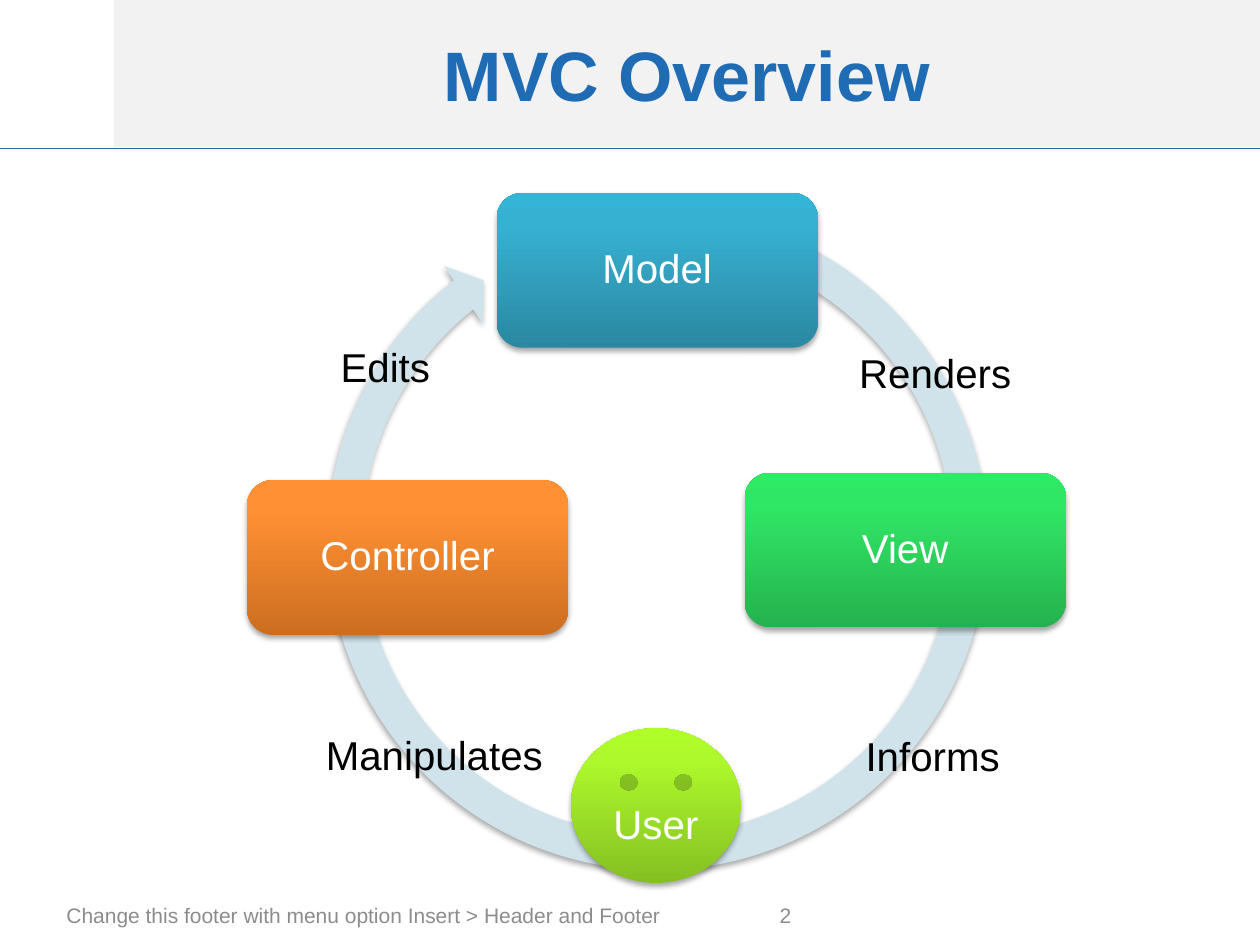
from copy import deepcopy

from lxml import etree
from pptx import Presentation
from pptx.dml.color import RGBColor
from pptx.enum.shapes import MSO_CONNECTOR, MSO_SHAPE
from pptx.enum.text import MSO_ANCHOR, MSO_AUTO_SIZE, PP_ALIGN
from pptx.oxml.ns import qn
from pptx.util import Cm, Pt

LEFT, CENTER, RIGHT = PP_ALIGN.LEFT, PP_ALIGN.CENTER, PP_ALIGN.RIGHT
MIDDLE = MSO_ANCHOR.MIDDLE
FIT_SHAPE, NO_FIT = MSO_AUTO_SIZE.SHAPE_TO_FIT_TEXT, MSO_AUTO_SIZE.NONE
RECTANGLE, ROUNDED = MSO_SHAPE.RECTANGLE, MSO_SHAPE.ROUNDED_RECTANGLE
SMILEY, CIRCULAR_ARROW = MSO_SHAPE.SMILEY_FACE, MSO_SHAPE.CIRCULAR_ARROW
STRAIGHT = MSO_CONNECTOR.STRAIGHT

BLUE = RGBColor(0x1F, 0x6C, 0xB4)
BAND_GRAY = RGBColor(0xF2, 0xF2, 0xF2)
FOOTER_GRAY = RGBColor(0x8C, 0x8C, 0x8C)
PALE_BLUE = RGBColor(0xD0, 0xE3, 0xEA)
WHITE = RGBColor(0xFF, 0xFF, 0xFF)
BLACK = RGBColor(0x00, 0x00, 0x00)

# Gradient colours from the bottom of a node to its top
TEAL = (RGBColor(0x2A, 0x88, 0xA2), RGBColor(0x37, 0xB1, 0xD2), RGBColor(0x34, 0xB4, 0xD6))
GREEN = (RGBColor(0x25, 0xB2, 0x4E), RGBColor(0x30, 0xE7, 0x65), RGBColor(0x2D, 0xEB, 0x64))
LIME = (RGBColor(0x85, 0xC0, 0x22), RGBColor(0xAD, 0xF9, 0x2C), RGBColor(0xAF, 0xFE, 0x28))
ORANGE = (RGBColor(0xCC, 0x6E, 0x20), RGBColor(0xFF, 0x90, 0x34), RGBColor(0xFF, 0x91, 0x36))
GRADIENT_POSITIONS = (0, 0.8, 1)

FONT = "Arial"
DIAGRAM_SIZE = 23
NODE_HEIGHT = 3.12
NODE_INSET = 0.25
FACE_TEXT_DROP = 0.84  # one line, keeps the word below the eyes


def write_text(shape, text, size, color, align=LEFT, bold=False, spacing=None):
    frame = shape.text_frame
    frame.vertical_anchor = MIDDLE
    paragraph = frame.paragraphs[0]
    paragraph.alignment = align
    if spacing:
        paragraph.line_spacing = spacing
    run = paragraph.add_run()
    run.text = text
    run.font.name = FONT
    run.font.size = Pt(size)
    run.font.bold = bold
    run.font.color.rgb = color


def add_text(slide, box, text, size, color, align=LEFT, wrap=True, spacing=None):
    text_box = slide.shapes.add_textbox(*map(Cm, box))
    text_box.text_frame.word_wrap = wrap
    text_box.text_frame.auto_size = NO_FIT if wrap else FIT_SHAPE
    write_text(text_box, text, size, color, align, spacing=spacing)


def add_plain_shape(slide, kind, box, color=None):
    shape = slide.shapes.add_shape(kind, *map(Cm, box))
    shape.shadow.inherit = False
    shape.line.fill.background()
    if color is not None:
        shape.fill.solid()
        shape.fill.fore_color.rgb = color
    return shape


def add_soft_shadow(shape):
    effects = shape._element.spPr.find(qn("a:effectLst"))
    shadow = etree.SubElement(effects, qn("a:outerShdw"), blurRad="40000",
                              dist="23000", dir="5400000", rotWithShape="0")
    color = etree.SubElement(shadow, qn("a:srgbClr"), val="000000")
    etree.SubElement(color, qn("a:alpha"), val="35000")


def fill_gradient(shape, colors):
    shape.fill.gradient()
    shape.fill.gradient_angle = 90
    stop_list = shape._element.spPr.find(".//" + qn("a:gsLst"))
    stop_list.append(deepcopy(stop_list[-1]))
    for stop, position, color in zip(shape.fill.gradient_stops, GRADIENT_POSITIONS, colors):
        stop.position = position
        stop.color.rgb = color


def add_node(slide, kind, left, top, width, text, colors, text_drop=0):
    node = add_plain_shape(slide, kind, (left, top, width, NODE_HEIGHT))
    fill_gradient(node, colors)
    add_soft_shadow(node)
    frame = node.text_frame
    frame.word_wrap = True
    frame.margin_left = frame.margin_right = frame.margin_bottom = Cm(NODE_INSET)
    frame.margin_top = Cm(NODE_INSET + text_drop)
    write_text(node, text, DIAGRAM_SIZE, WHITE, CENTER, spacing=0.9)


def add_cycle_arrow(slide):
    arrow = add_plain_shape(slide, CIRCULAR_ARROW, (6.25, 3.89, 14, 14), PALE_BLUE)
    for index, value in enumerate((0.05, 2.73, 139.02, 173.45, 0.05)):
        arrow.adjustments[index] = value
    add_soft_shadow(arrow)


def add_rule(slide, top, width):
    rule = slide.shapes.add_connector(STRAIGHT, 0, Cm(top), width, Cm(top))
    rule.line.color.rgb = BLUE
    rule.line.width = Pt(0.75)
    etree.SubElement(rule._element.spPr, qn("a:effectLst"))


def main():
    presentation = Presentation()
    presentation.slide_width = Cm(25.4)
    presentation.slide_height = Cm(19.05)
    slide = presentation.slides.add_slide(presentation.slide_layouts[6])

    # Header and footer
    add_rule(slide, 3, presentation.slide_width)
    add_text(slide, (1.09, 17.93, 13.36, 1.02),
             "Change this footer with menu option Insert > Header and Footer", 12, FOOTER_GRAY)
    add_text(slide, (14.45, 17.93, 1.75, 1.02), "2", 12, FOOTER_GRAY, RIGHT)
    title = add_plain_shape(slide, RECTANGLE, (2.29, 0, 23.11, 2.97), BAND_GRAY)
    write_text(title, "MVC Overview", 40, BLUE, CENTER, bold=True)

    # Cycle with its nodes
    add_cycle_arrow(slide)
    add_node(slide, ROUNDED, 10.01, 3.89, 6.48, "Model", TEAL)
    add_node(slide, ROUNDED, 15.01, 9.53, 6.48, "View", GREEN)
    add_node(slide, SMILEY, 11.51, 14.68, 3.43, "User", LIME, FACE_TEXT_DROP)
    add_node(slide, ROUNDED, 4.98, 9.68, 6.48, "Controller", ORANGE)

    # Labels on the cycle
    for text, box, align, spacing in (
        ("Renders", (17.07, 6.88, 3.61, 1.24), LEFT, None),
        ("Informs", (17.2, 14.61, 3.23, 1.24), LEFT, None),
        ("Manipulates", (6.32, 14.58, 4.93, 1.24), LEFT, None),
        ("Edits", (6.6, 6.88, 2.34, 1.14), CENTER, 0.9),
    ):
        add_text(slide, box, text, DIAGRAM_SIZE, BLACK, align, wrap=False, spacing=spacing)

    presentation.save("out.pptx")


if __name__ == "__main__":
    main()
